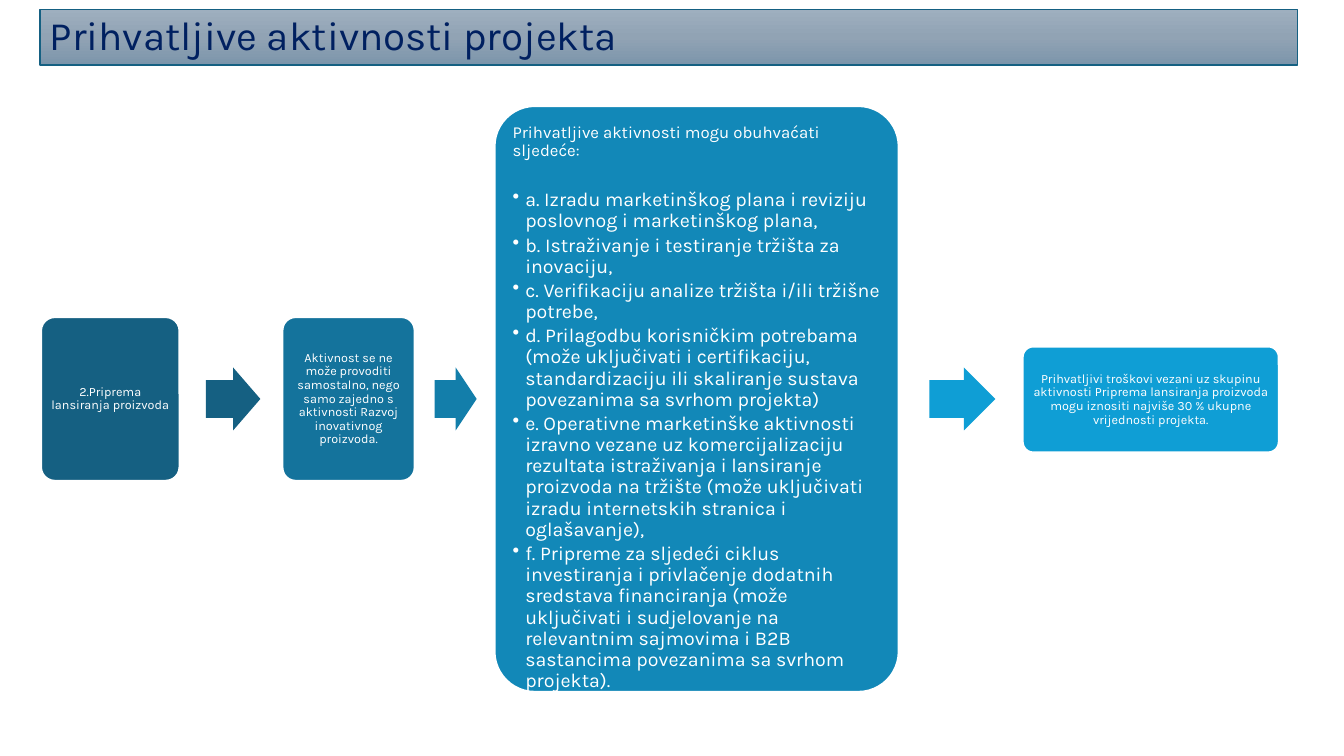
from copy import deepcopy

from lxml import etree
from pptx import Presentation
from pptx import util as u
from pptx.dml.color import RGBColor
from pptx.enum import shapes, text
from pptx.oxml.ns import qn

PX = 9525
COLORS = {
    "white": "FFFFFF", "navy": "002060", "petrol": "156082", "teal": "14739C",
    "sea": "137EAA", "blue": "1288B8", "sky": "0F9ED5",
    "bar_top": "9EAFBF", "bar_middle": "91A3B4", "bar_bottom": "7C95AB",
}
MIDDLE_Y = 380
ARROW_HEIGHT = 60
BULLET_INDENT = 12


def rgb(name):
    return RGBColor.from_string(COLORS[name])


class SlideBuilder:
    font = "Karla"
    line_spacing = 0.9

    def __init__(self, slide):
        self.slide = slide

    def shape(self, kind, left, top, width, height, fill=None, line=None, line_width=1.5, adjust=()):
        shape = self.slide.shapes.add_shape(kind, *(v * PX for v in (left, top, width, height)))
        shape.shadow.inherit = False
        for index, value in enumerate(adjust):
            shape.adjustments[index] = value
        if fill:
            shape.fill.solid()
            shape.fill.fore_color.rgb = rgb(fill)
        if line:
            shape.line.color.rgb = rgb(line)
            shape.line.width = u.Pt(line_width)
        else:
            shape.line.fill.background()
        return shape

    def frame(self, shape, anchor, inset=None):
        frame = shape.text_frame
        values = {"word_wrap": True, "vertical_anchor": anchor}
        if inset is not None:
            values.update({f"margin_{side}": inset * PX for side in ("left", "top", "right", "bottom")})
        for name, value in values.items():
            setattr(frame, name, value)
        return frame

    def add_words(self, paragraph, words, size, color="white", align=text.PP_ALIGN.LEFT, after=0, bullet=False):
        if bullet:
            properties = paragraph._p.get_or_add_pPr()
            properties.set("marL", str(BULLET_INDENT * PX))
            properties.set("indent", str(-BULLET_INDENT * PX))
            etree.SubElement(properties, qn("a:buChar")).set("char", "•")
        layout = {"alignment": align, "line_spacing": self.line_spacing, "space_after": u.Pt(after)}
        for name, value in layout.items():
            setattr(paragraph, name, value)
        run = paragraph.add_run()
        run.text = words
        for name, value in {"name": self.font, "size": u.Pt(size)}.items():
            setattr(run.font, name, value)
        run.font.color.rgb = rgb(color)

    def title(self, words, left, top, width, height):
        bar = self.shape(shapes.MSO_SHAPE.RECTANGLE, left, top, width, height, line="petrol", line_width=1)
        bar.fill.gradient()
        bar.fill.gradient_angle = 270
        stop_list = bar._element.spPr.find(".//" + qn("a:gsLst"))
        stop_list.insert(1, deepcopy(stop_list[0]))
        names = ("bar_top", "bar_middle", "bar_bottom")
        for stop, position, name in zip(bar.fill.gradient_stops, (0, 0.5, 1), names):
            stop.position = position
            stop.color.rgb = rgb(name)
        frame = self.frame(bar, text.MSO_ANCHOR.MIDDLE)
        self.add_words(frame.paragraphs[0], words, 28.8, "navy")

    def box(self, left, width, height, fill):
        return self.shape(shapes.MSO_SHAPE.ROUNDED_RECTANGLE, left, MIDDLE_Y - height // 2,
                          width, height, fill, "white", adjust=(0.1,))

    def step(self, words, left, width, height, fill):
        frame = self.frame(self.box(left, width, height, fill), text.MSO_ANCHOR.MIDDLE, 4)
        self.add_words(frame.paragraphs[0], words, 9, align=text.PP_ALIGN.CENTER)

    def list_step(self, heading, items, left, width, height, fill):
        frame = self.frame(self.box(left, width, height, fill), text.MSO_ANCHOR.TOP, 6)
        self.add_words(frame.paragraphs[0], heading, 12, after=21)
        for item in items:
            self.add_words(frame.add_paragraph(), item, 14, after=2.1, bullet=True)

    def arrow(self, left, width, fill):
        self.shape(shapes.MSO_SHAPE.RIGHT_ARROW, left, MIDDLE_Y - ARROW_HEIGHT // 2,
                   width, ARROW_HEIGHT, fill, adjust=(0.6, 0.5))


ACTIVITIES = (
    "a. Izradu marketinškog plana i reviziju poslovnog i marketinškog plana,",
    "b. Istraživanje i testiranje tržišta za inovaciju,",
    "c. Verifikaciju analize tržišta i/ili tržišne potrebe,",
    "d. Prilagodbu korisničkim potrebama (može uključivati i certifikaciju, "
    "standardizaciju ili skaliranje sustava povezanima sa svrhom projekta)",
    "e. Operativne marketinške aktivnosti izravno vezane uz komercijalizaciju "
    "rezultata istraživanja i lansiranje proizvoda na tržište (može uključivati "
    "izradu internetskih stranica i oglašavanje),",
    "f. Pripreme za sljedeći ciklus investiranja i privlačenje dodatnih sredstava "
    "financiranja (može uključivati i sudjelovanje na relevantnim sajmovima i B2B "
    "sastancima povezanima sa svrhom projekta).",
)


def main():
    presentation = Presentation()
    presentation.slide_width = 1280 * PX
    presentation.slide_height = 720 * PX
    builder = SlideBuilder(presentation.slides.add_slide(presentation.slide_layouts[6]))

    # Title bar
    builder.title("Prihvatljive aktivnosti projekta", 38, 9, 1198, 53)

    # Process steps from left to right
    builder.step("2.Priprema lansiranja proizvoda", 39, 132, 156, "petrol")
    builder.arrow(196, 52, "petrol")
    builder.step("Aktivnost se ne može provoditi samostalno, nego samo zajedno s "
                 "aktivnosti Razvoj inovativnog proizvoda.", 269, 126, 156, "teal")
    builder.arrow(414, 40, "sea")
    builder.list_step("Prihvatljive aktivnosti mogu obuhvaćati sljedeće:", ACTIVITIES,
                      471, 385, 558, "blue")
    builder.arrow(885, 63, "sky")
    builder.step("Prihvatljivi troškovi vezani uz skupinu aktivnosti Priprema lansiranja "
                 "proizvoda mogu iznositi najviše 30 % ukupne vrijednosti projekta.",
                 974, 244, 101, "sky")

    presentation.save("out.pptx")


if __name__ == "__main__":
    main()
